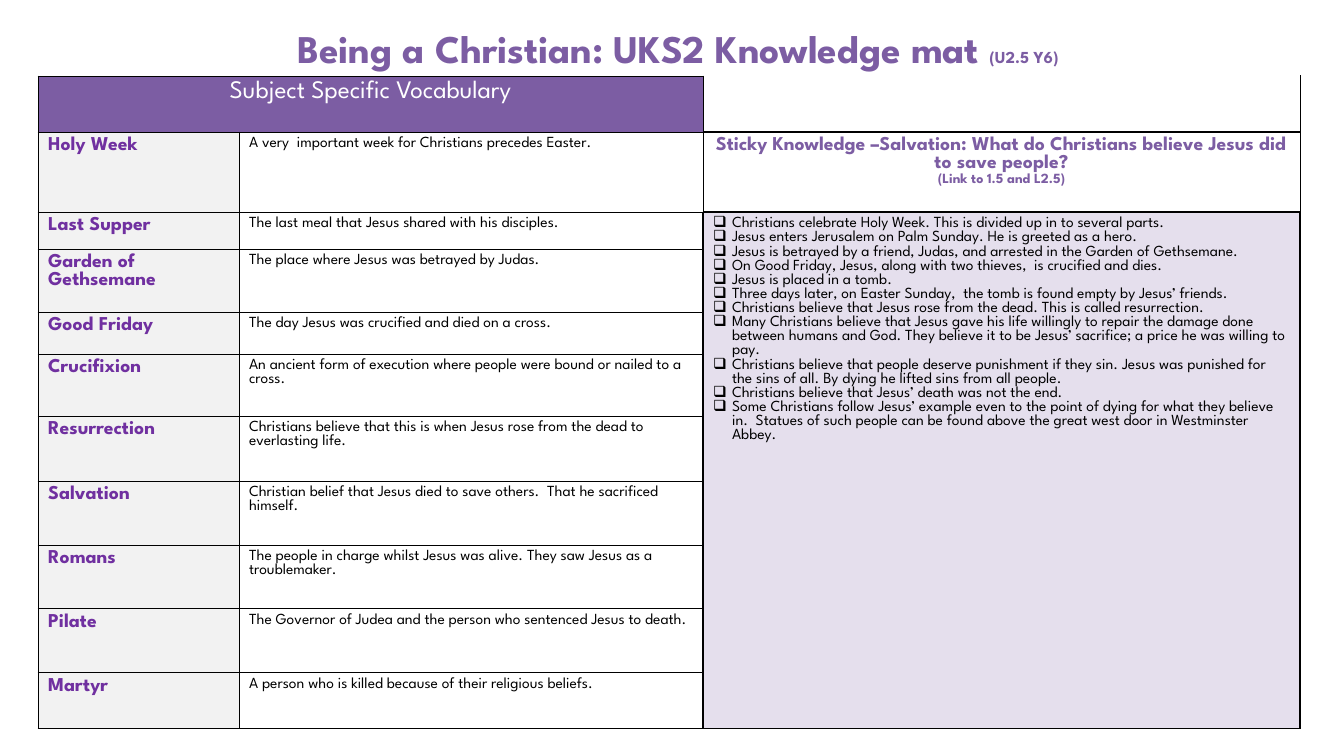
from dataclasses import dataclass

from lxml import etree
from pptx import Presentation
from pptx import util as u
from pptx.dml import color
from pptx.enum import text
from pptx.oxml import ns


@dataclass(frozen=True)
class Theme:
    font: str = "League Spartan"
    purple: str = "7C5DA3"
    violet: str = "7030A0"
    lilac: str = "E5DFED"
    grey: str = "F2F2F2"
    white: str = "FFFFFF"
    black: str = "000000"
    title: int = 28
    header: int = 18
    term: int = 14
    note: int = 12
    body: int = 11
    link: int = 10
    thin: float = 0.5
    thick: float = 1


class KnowledgeMat:
    """Draws the elements of a knowledge mat on one slide."""

    def __init__(self, width, height, theme):
        self.theme = theme
        self.presentation = Presentation()
        self.presentation.slide_width = self.px(width)
        self.presentation.slide_height = self.px(height)
        self.slide = self.presentation.slides.add_slide(self.presentation.slide_layouts[6])

    def px(self, length):
        return u.Emu(round(length * 914400 / 100.8))

    def run(self, paragraph, words, size, ink, bold=False):
        run = paragraph.add_run()
        run.text = words
        run.font.name = self.theme.font
        run.font.size = u.Pt(size)
        run.font.bold = bold
        run.font.color.rgb = color.RGBColor.from_string(ink)

    def bullet(self, paragraph, indent, symbol="❑"):
        properties = paragraph._p.get_or_add_pPr()
        properties.set("marL", str(self.px(indent)))
        properties.set("indent", str(-self.px(indent)))
        etree.SubElement(properties, ns.qn("a:buChar"), char=symbol)

    def text_box(self, left, top, width, height):
        box = self.slide.shapes.add_textbox(*map(self.px, (left, top, width, height)))
        frame = box.text_frame
        frame.word_wrap = True
        frame.auto_size = text.MSO_AUTO_SIZE.SHAPE_TO_FIT_TEXT
        return self.centred(frame.paragraphs[0])

    def centred(self, paragraph):
        paragraph.alignment = text.PP_ALIGN.CENTER
        return paragraph

    def table(self, left, top, widths, heights):
        box = map(self.px, (left, top, sum(widths), sum(heights)))
        table = self.slide.shapes.add_table(len(heights), len(widths), *box).table
        table.first_row = table.horz_banding = False
        for column, width in zip(table.columns, widths):
            column.width = self.px(width)
        for row, height in zip(table.rows, heights):
            row.height = self.px(height)
        return table

    def border(self, cell, **sides):
        properties = cell._tc.get_or_add_tcPr()
        for side in "LRTB":
            ink, weight = sides.get(side, (self.theme.black, self.theme.thin))
            line = etree.SubElement(properties, ns.qn(f"a:ln{side}"), w=str(u.Pt(weight)))
            fill = etree.SubElement(line, ns.qn("a:solidFill"))
            etree.SubElement(fill, ns.qn("a:srgbClr"), val=ink)

    def fill(self, cell, ink=None):
        if ink:
            cell.fill.solid()
            cell.fill.fore_color.rgb = color.RGBColor.from_string(ink)
        else:
            cell.fill.background()


VOCABULARY = [
    ("Holy Week", "A very  important week for Christians precedes Easter."),
    ("Last Supper", "The last meal that Jesus shared with his disciples."),
    ("Garden of Gethsemane", "The place where Jesus was betrayed by Judas."),
    ("Good Friday", "The day Jesus was crucified and died on a cross."),
    ("Crucifixion", "An ancient form of execution where people were bound or nailed to a cross."),
    ("Resurrection", "Christians believe that this is when Jesus rose from the dead to everlasting life."),
    ("Salvation", "Christian belief that Jesus died to save others.  That he sacrificed himself."),
    ("Romans", "The people in charge whilst Jesus was alive. They saw Jesus as a troublemaker."),
    ("Pilate", "The Governor of Judea and the person who sentenced Jesus to death."),
    ("Martyr", "A person who is killed because of their religious beliefs."),
]

STICKY_KNOWLEDGE = [
    "Christians celebrate Holy Week. This is divided up in to several parts.",
    "Jesus enters Jerusalem on Palm Sunday. He is greeted as a hero.",
    "Jesus is betrayed by a friend, Judas, and arrested in the Garden of Gethsemane.",
    "On Good Friday, Jesus, along with two thieves,  is crucified and dies.",
    "Jesus is placed in a tomb.",
    "Three days later, on Easter Sunday,  the tomb is found empty by Jesus’ friends.",
    "Christians believe that Jesus rose from the dead. This is called resurrection.",
    "Many Christians believe that Jesus gave his life willingly to repair the damage done "
    "between humans and God. They believe it to be Jesus’ sacrifice; a price he was willing to pay.",
    "Christians believe that people deserve punishment if they sin. Jesus was punished for "
    "the sins of all. By dying he lifted sins from all people.",
    "Christians believe that Jesus’ death was not the end.",
    "Some Christians follow Jesus’ example even to the point of dying for what they believe in.  "
    "Statues of such people can be found above the great west door in Westminster Abbey.",
]


def main():
    theme = Theme()
    mat = KnowledgeMat(1344, 756, theme)
    thick = (theme.black, theme.thick)

    table = mat.table(38, 76, [201, 464, 597], [56, 80, 37, 63, 42, 62, 65, 64, 64, 64, 56])
    header, blank, question, knowledge = (
        table.cell(*place) for place in [(0, 0), (0, 2), (1, 2), (2, 2)]
    )
    header.merge(table.cell(0, 1))
    knowledge.merge(table.cell(10, 2))

    for cell in (header, table.cell(0, 1)):
        mat.border(cell)
        mat.fill(cell, theme.purple)
    heading = mat.centred(header.text_frame.paragraphs[0])
    mat.run(heading, "Subject Specific Vocabulary", theme.header, theme.white)

    mat.border(blank, T=(theme.white, theme.thick), B=thick)
    mat.border(question, T=thick, B=thick)
    for cell in (blank, question):
        mat.fill(cell)

    for row, (term, meaning) in enumerate(VOCABULARY, 1):
        term_cell, meaning_cell = table.cell(row, 0), table.cell(row, 1)
        mat.border(term_cell)
        mat.fill(term_cell, theme.grey)
        mat.run(term_cell.text_frame.paragraphs[0], term, theme.term, theme.violet, True)
        mat.border(meaning_cell, **({"R": thick} if row > 1 else {}))
        mat.fill(meaning_cell)
        mat.run(meaning_cell.text_frame.paragraphs[0], meaning, theme.body, theme.black)
        if row > 1:
            mat.border(table.cell(row, 2), L=thick, R=thick, T=thick)
            mat.fill(table.cell(row, 2), theme.lilac)

    frame = question.text_frame
    mat.run(
        mat.centred(frame.paragraphs[0]),
        "Sticky Knowledge –Salvation: What do Christians believe Jesus did to save people?",
        theme.term, theme.purple, True,
    )
    link = mat.centred(frame.add_paragraph())
    mat.run(link, "(Link to 1.5 and L2.5)", theme.link, theme.purple, True)

    frame = knowledge.text_frame
    for index, fact in enumerate(STICKY_KNOWLEDGE):
        paragraph = frame.add_paragraph() if index else frame.paragraphs[0]
        mat.bullet(paragraph, 19)
        mat.run(paragraph, fact, theme.body, theme.black)

    title = mat.text_box(212, 19, 932, 57)
    mat.run(title, "Being a Christian: UKS2 Knowledge mat ", theme.title, theme.purple, True)
    mat.run(title, "(U2.5 Y6)", theme.note, theme.purple, True)

    mat.presentation.save("out.pptx")


if __name__ == "__main__":
    main()
